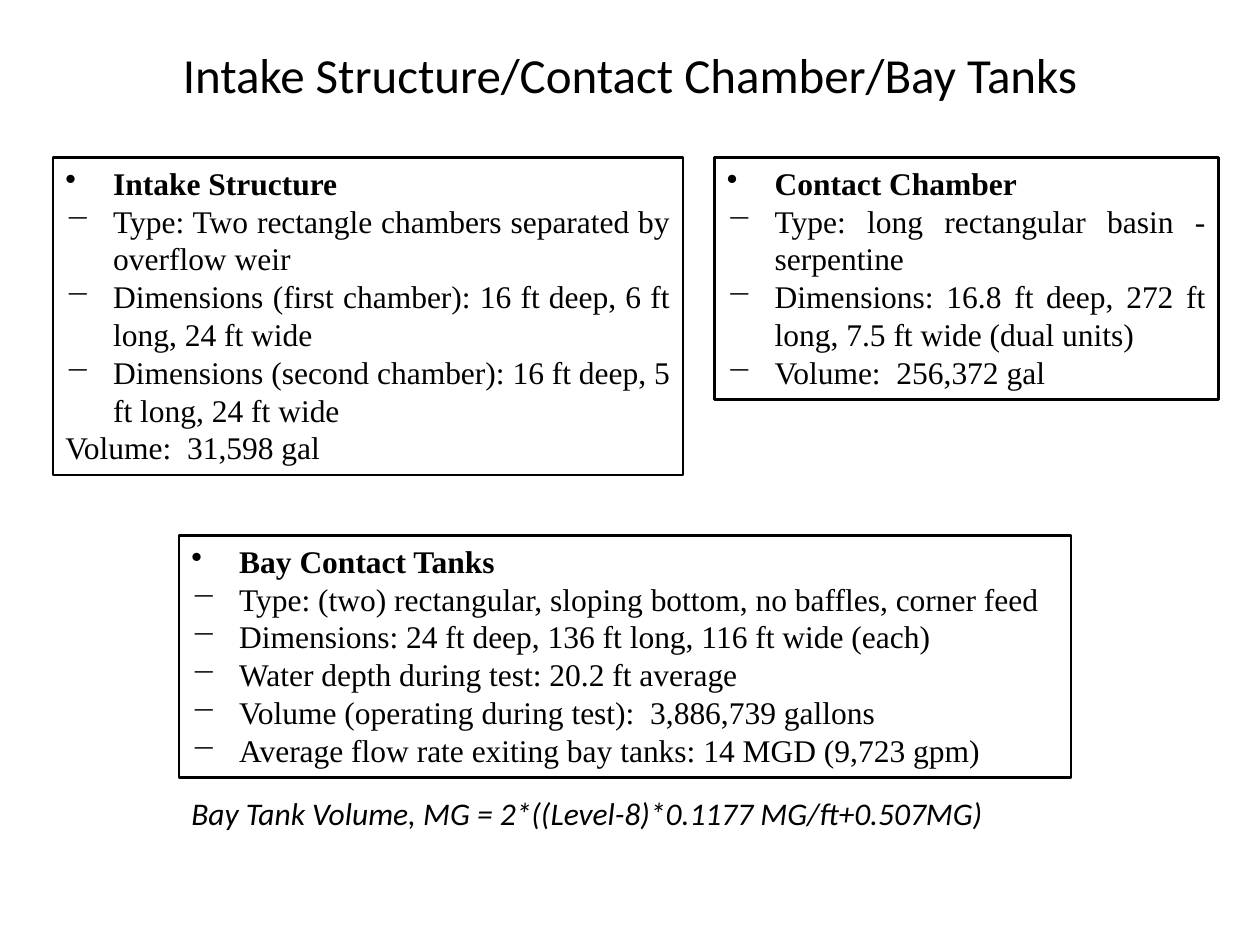
from dataclasses import dataclass

from pptx import Presentation
from pptx.dml.color import RGBColor as Rgb
from pptx.enum.shapes import MSO_SHAPE as Kind
from pptx.enum.text import MSO_ANCHOR as Anchor, MSO_AUTO_SIZE as Fit, PP_ALIGN as Align
from pptx.oxml.ns import qn
from pptx.util import Inches, Pt
from lxml.etree import SubElement as Sub

HUES = {"ink": "000000"}
INK = Rgb.from_string(HUES["ink"])
INDENT = Inches(0.38)


@dataclass
class Panel:
    left: float
    top: float
    width: float
    height: float
    head: str
    items: list[str]
    foot: str = ""


@dataclass
class Label:
    left: float
    top: float
    width: float
    height: float
    text: str
    size: int
    align: Align = Align.LEFT
    italic: bool = False


PANELS = [
    Panel(5.67, 1.25, 4, 1.92, "Contact Chamber", [
        "Type: long rectangular basin - serpentine",
        "Dimensions: 16.8 ft deep, 272 ft long, 7.5 ft wide (dual units)",
        "Volume:  256,372 gal ",
    ]),
    Panel(0.42, 1.25, 5, 2.52, "Intake Structure", [
        "Type: Two rectangle chambers separated by overflow weir",
        "Dimensions (first chamber): 16 ft deep, 6 ft long, 24 ft wide",
        "Dimensions (second chamber): 16 ft deep, 5 ft long, 24 ft wide",
    ], "Volume:  31,598 gal"),
    Panel(1.42, 4.25, 7.08, 1.92, "Bay Contact Tanks", [
        "Type: (two) rectangular, sloping bottom, no baffles, corner feed",
        "Dimensions: 24 ft deep, 136 ft long, 116 ft wide (each)",
        "Water depth during test: 20.2 ft average",
        "Volume (operating during test):  3,886,739 gallons",
        "Average flow rate exiting bay tanks: 14 MGD (9,723 gpm)",
    ]),
]

TITLE = Label(0.5, 0.3, 9, 1.25, "Intake Structure/Contact Chamber/Bay Tanks", 28, Align.CENTER)
NOTE = Label(1.42, 6.25, 6.75, 0.4,
             "Bay Tank Volume, MG = 2*((Level-8)*0.1177 MG/ft+0.507MG)", 18, italic=True)


def place(item: Panel | Label) -> list[int]:
    return [Inches(n) for n in (item.left, item.top, item.width, item.height)]


def style(para, face: str, size: int, align: Align) -> None:
    para.alignment = align
    font = para.font
    font.name, font.size = face, Pt(size)
    font.color.rgb = INK


def bullet(para, mark: str, tab: float) -> None:
    props = para._p.get_or_add_pPr()
    props.set("marL", str(INDENT))
    props.set("indent", str(-INDENT))
    dot = Sub(props, qn("a:buChar"), char=mark)
    tabs = Sub(props, qn("a:tabLst"))
    Sub(tabs, qn("a:tab"), pos=str(Inches(tab)), algn="l")
    rest = props.find(qn("a:defRPr"))
    if rest is not None:
        rest.addprevious(dot)
        rest.addprevious(tabs)


def draw_panel(slide, panel: Panel) -> None:
    box = slide.shapes.add_shape(Kind.RECTANGLE, *place(panel))
    box.shadow.inherit = False
    box.fill.background()
    box.line.color.rgb = INK
    box.line.width = Pt(1.5)
    frame = box.text_frame
    frame.word_wrap = True
    frame.auto_size = Fit.SHAPE_TO_FIT_TEXT
    frame.vertical_anchor = Anchor.TOP
    rows = [(panel.head, "•", 1)] + [(text, "−", 1.75) for text in panel.items]
    if panel.foot:
        rows.append((panel.foot, "", 0))
    for i, (text, mark, tab) in enumerate(rows):
        para = frame.add_paragraph() if i else frame.paragraphs[0]
        para.text = text
        style(para, "Times New Roman", 18, Align.JUSTIFY if mark else Align.LEFT)
        para.font.bold = i == 0
        if mark:
            bullet(para, mark, tab)


def draw_label(slide, label: Label) -> None:
    frame = slide.shapes.add_textbox(*place(label)).text_frame
    frame.word_wrap = True
    para = frame.paragraphs[0]
    para.text = label.text
    style(para, "Calibri", label.size, label.align)
    para.font.italic = label.italic


def main() -> None:
    deck = Presentation()
    deck.slide_width, deck.slide_height = Inches(10), Inches(7.5)
    slide = deck.slides.add_slide(deck.slide_layouts[6])
    draw_label(slide, TITLE)
    for panel in PANELS:
        draw_panel(slide, panel)
    draw_label(slide, NOTE)
    deck.save("out.pptx")


if __name__ == "__main__":
    main()
